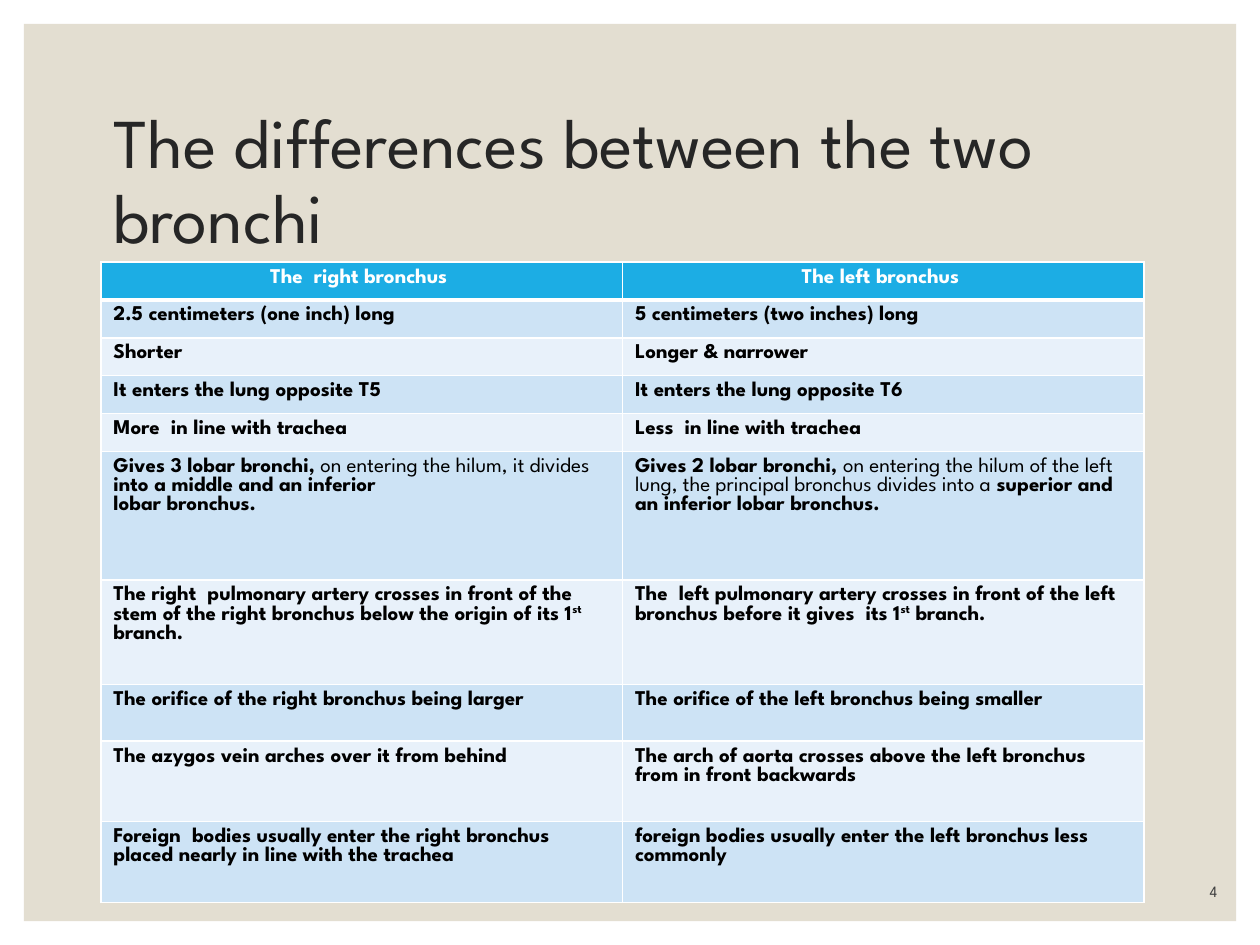
from lxml.etree import SubElement
from pptx import Presentation
from pptx.dml.color import RGBColor
from pptx.enum.shapes import MSO_SHAPE as Shape
from pptx.enum.text import MSO_ANCHOR as Anchor, PP_ALIGN as Align
from pptx.oxml.ns import qn
from pptx.util import Inches, Pt

FONT = "League Spartan"
WHITE = RGBColor(0xFF, 0xFF, 0xFF)
BLACK = RGBColor(0x00, 0x00, 0x00)
SAND = RGBColor(0xE3, 0xDE, 0xD1)
TITLE_INK = RGBColor(0x26, 0x26, 0x26)
NUMBER_INK = RGBColor(0x40, 0x40, 0x40)
HEADER_BLUE = RGBColor(0x1C, 0xAD, 0xE4)
BAND_DARK = RGBColor(0xCD, 0xE3, 0xF5)
BAND_LIGHT = RGBColor(0xE8, 0xF1, 0xFA)

BOLD, REGULAR, RAISED = "bold", "regular", "raised"
COLUMN_WIDTH = 4.14
ROW_HEIGHTS = [0.3] * 5 + [1.02, 0.83, 0.45, 0.64, 0.64]

ROWS = [
    ("The  right bronchus ", "The left bronchus "),
    ("2.5 centimeters (one inch) long", "5 centimeters (two inches) long"),
    ("Shorter", "Longer & narrower"),
    ("It enters the lung opposite T5", "It enters the lung opposite T6"),
    ("More  in line with trachea", "Less  in line with trachea"),
    (
        [
            [
                ("Gives 3 lobar bronchi,", BOLD),
                (" on entering the hilum, it divides ", REGULAR),
                ("into a middle and an inferior", BOLD),
            ],
            [("lobar bronchus.", BOLD)],
        ],
        [
            [
                ("Gives 2 lobar bronchi, ", BOLD),
                ("on entering the hilum of the left lung, the principal "
                 "bronchus divides into a ", REGULAR),
                ("superior and an inferior lobar bronchus.", BOLD),
            ]
        ],
    ),
    (
        [
            [
                ("The right  pulmonary artery crosses in front of the stem of "
                 "the right bronchus below the origin of its 1", BOLD),
                ("st", RAISED),
                (" branch.", BOLD),
            ]
        ],
        [
            [
                ("The  left pulmonary artery crosses in front of the left "
                 "bronchus before it gives  its 1", BOLD),
                ("st", RAISED),
                (" branch.", BOLD),
            ]
        ],
    ),
    ("The orifice of the right bronchus being larger",
     "The orifice of the left bronchus being smaller"),
    ("The azygos vein arches over it from behind",
     "The arch of aorta crosses above the left bronchus from in front backwards"),
    ("Foreign  bodies usually enter the right bronchus placed nearly in line "
     "with the trachea",
     "foreign bodies usually enter the left bronchus less commonly"),
]


def add_label(page, text, area, size, color, anchor):
    box = page.shapes.add_textbox(*[Inches(length) for length in area])
    frame = box.text_frame
    frame.word_wrap = True
    frame.vertical_anchor = anchor
    frame.text = text
    para = frame.paragraphs[0]
    font = para.runs[0].font
    font.name, font.size, font.color.rgb = FONT, Pt(size), color
    return para


def add_border(cell, side, width):
    line = SubElement(cell._tc.get_or_add_tcPr(), qn(f"a:ln{side}"), w=str(Pt(width)))
    fill = SubElement(line, qn("a:solidFill"))
    SubElement(fill, qn("a:srgbClr"), val=str(WHITE))


deck = Presentation()
deck.slide_width, deck.slide_height = Inches(10), Inches(7.5)
page = deck.slides.add_slide(deck.slide_layouts[6])
page.background.fill.solid()
page.background.fill.fore_color.rgb = WHITE

panel = page.shapes.add_shape(
    Shape.RECTANGLE, Inches(0.19), Inches(0.19), Inches(9.62), Inches(7.12)
)
panel.shadow.inherit = False
panel.fill.solid()
panel.fill.fore_color.rgb = SAND
panel.line.fill.background()

title = add_label(page, "The differences between the two bronchi",
                  (0.8, 0.7, 8.4, 1.5), 40, TITLE_INK, Anchor.MIDDLE)
title.line_spacing = Pt(43)

table = page.shapes.add_table(
    len(ROWS), 2, Inches(0.8), Inches(2.08),
    Inches(2 * COLUMN_WIDTH), Inches(sum(ROW_HEIGHTS))
).table
for column in table.columns:
    column.width = Inches(COLUMN_WIDTH)

for row_index, (row, height) in enumerate(zip(ROWS, ROW_HEIGHTS)):
    table.rows[row_index].height = Inches(height)
    header = row_index == 0
    band = HEADER_BLUE if header else BAND_DARK if row_index % 2 else BAND_LIGHT
    for column_index, content in enumerate(row):
        cell = table.cell(row_index, column_index)
        for side in "LRTB":
            thick = (header and side == "B") or (row_index == 1 and side == "T")
            add_border(cell, side, 3 if thick else 1)
        cell.fill.solid()
        cell.fill.fore_color.rgb = band
        paragraphs = [[(content, BOLD)]] if isinstance(content, str) else content
        frame = cell.text_frame
        for para_index, spans in enumerate(paragraphs):
            para = frame.add_paragraph() if para_index else frame.paragraphs[0]
            para.alignment = Align.CENTER if header else Align.LEFT
            for text, style in spans:
                span = para.add_run()
                span.text = text
                font = span.font
                font.name, font.size = FONT, Pt(12)
                font.bold = style != REGULAR
                font.color.rgb = WHITE if header else BLACK
                if style == RAISED:
                    span._r.get_or_add_rPr().set("baseline", "30000")

number = add_label(page, "4", (8.56, 6.9, 1.2, 0.3), 9, NUMBER_INK, Anchor.BOTTOM)
number.alignment = Align.RIGHT

deck.save("out.pptx")
